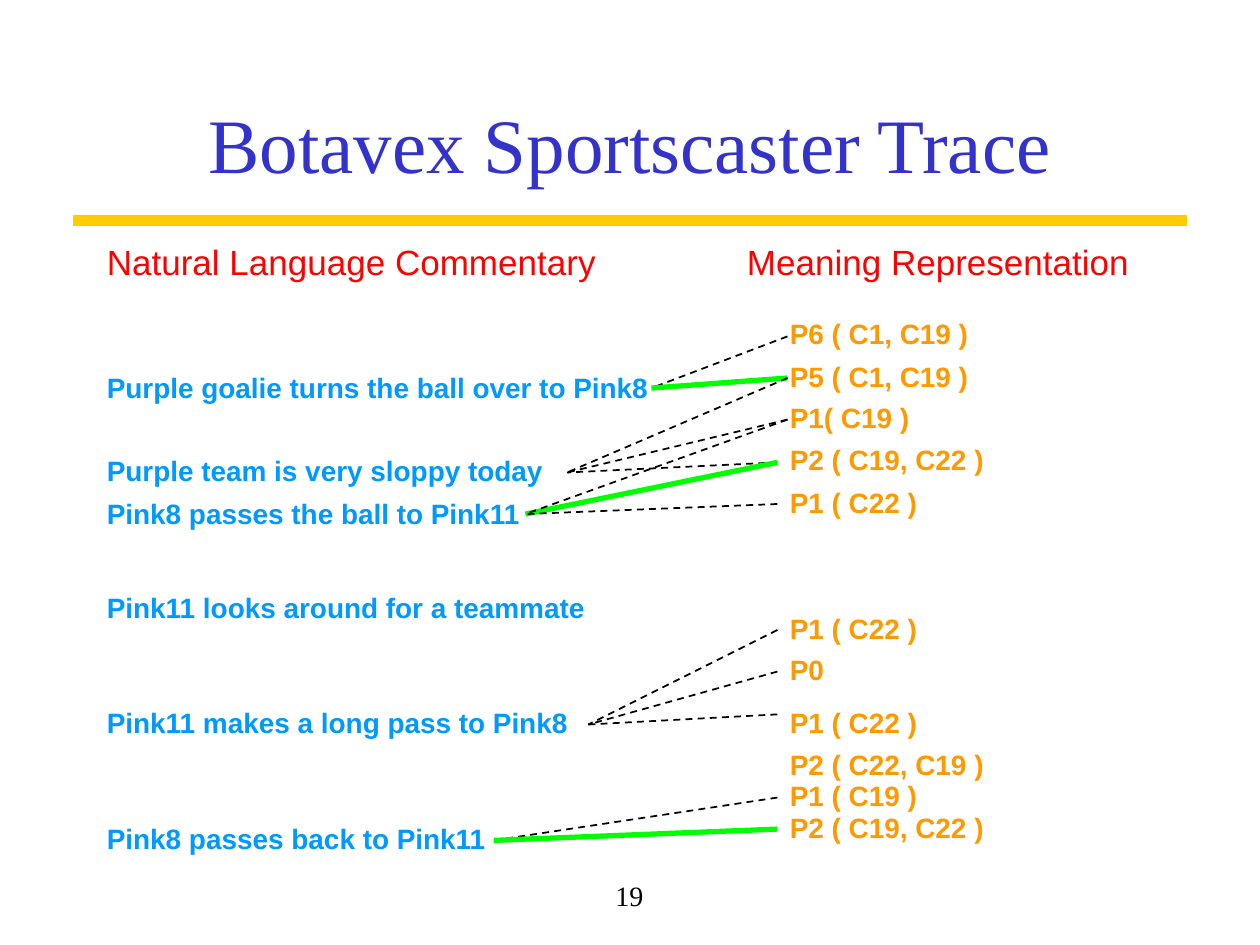
from dataclasses import dataclass

import pptx
import pptx.dml.color
import pptx.enum.dml
import pptx.enum.shapes
import pptx.enum.text
import pptx.oxml
import pptx.util

Inches = pptx.util.Inches
ALIGN = pptx.enum.text.PP_ALIGN
ANCHOR = pptx.enum.text.MSO_ANCHOR

COLORS = {
    "title": "3333CC",
    "heading": "FF0000",
    "comment": "0099FF",
    "meaning": "FF9900",
    "rule": "FFCC00",
    "match": "00FF00",
    "black": "000000",
}

FORMATS = {
    "title": {"size": pptx.util.Pt(44), "name": "Times New Roman", "bold": False},
    "number": {"size": pptx.util.Pt(16), "name": "Times New Roman"},
    "heading": {"size": pptx.util.Pt(20), "name": "Arial"},
    "entry": {"size": pptx.util.Pt(16), "name": "Arial", "bold": True},
}


@dataclass
class Label:
    text: str
    left: float
    top: float
    width: float
    height: float
    color: str
    style: str = "entry"
    spacing: float = 1.0
    align: int = ALIGN.LEFT


@dataclass
class Link:
    """A candidate pairing of a comment with a meaning; matches are the correct ones."""
    meaning: tuple[float, float]
    comment: tuple[float, float]
    match: bool = False


COMMENTS = [
    (2.92, "Purple goalie turns the ball over to Pink8"),
    (3.58, "Purple team is very sloppy today"),
    (3.92, "Pink8 passes the ball to Pink11"),
    (4.67, "Pink11 looks around for a teammate"),
    (5.58, "Pink11 makes a long pass to Pink8"),
    (6.5, "Pink8 passes back to Pink11"),
]

MEANINGS = [
    (2.33, "P6 ( C1, C19 )"),
    (2.67, "P5 ( C1, C19 )"),
    (3, "P1( C19 )"),
    (3.33, "P2 ( C19, C22 )"),
    (3.67, "P1 ( C22 )"),
    (4.67, "P1 ( C22 )"),
    (5, "P0"),
    (5.42, "P1 ( C22 )"),
    (5.75, "P2 ( C22, C19 )"),
    (6, "P1 ( C19 )"),
    (6.25, "P2 ( C19, C22 )"),
]

GOALIE, SLOPPY, PASS = (5.17, 3.08), (4.5, 3.75), (4.17, 4.08)
LONG_PASS, PASS_BACK = (4.67, 5.75), (3.92, 6.67)
LINKS = [
    Link((6.25, 2.67), GOALIE),
    Link((6.25, 3), GOALIE, match=True),
    Link((6.25, 3), SLOPPY),
    Link((6.25, 3.33), SLOPPY),
    Link((6.17, 3.67), SLOPPY),
    Link((6.17, 3.67), PASS, match=True),
    Link((6.17, 4), PASS),
    Link((6.17, 5), LONG_PASS),
    Link((6.17, 5.33), LONG_PASS),
    Link((6.17, 5.67), LONG_PASS),
    Link((6.17, 6.33), PASS_BACK),
    Link((6.17, 6.58), PASS_BACK, match=True),
    Link((6.25, 3.33), PASS),
]


def rgb(color: str) -> pptx.dml.color.RGBColor:
    return pptx.dml.color.RGBColor.from_string(COLORS[color])


def fill_text(box, label: Label) -> None:
    para = box.text_frame.paragraphs[0]
    para.alignment = label.align
    para.line_spacing = label.spacing
    span = para.add_run()
    span.text = label.text
    for name, value in FORMATS[label.style].items():
        setattr(span.font, name, value)
    span.font.color.rgb = rgb(label.color)


def place_title(page, label: Label) -> None:
    box = page.shapes.title
    for name in ("left", "top", "width", "height"):
        setattr(box, name, Inches(getattr(label, name)))
    box.text_frame.vertical_anchor = ANCHOR.MIDDLE
    fill_text(box, label)


def draw_label(page, label: Label) -> None:
    box = page.shapes.add_textbox(Inches(label.left), Inches(label.top),
                                  Inches(label.width), Inches(label.height))
    box.text_frame.word_wrap = True
    fill_text(box, label)


def draw_line(page, start: tuple[float, float], end: tuple[float, float],
              color: str, weight: float, dashed: bool = False) -> None:
    line = page.shapes.add_connector(
        pptx.enum.shapes.MSO_CONNECTOR.STRAIGHT,
        *(Inches(length) for length in (*start, *end)))
    line.line.color.rgb = rgb(color)
    line.line.width = pptx.util.Pt(weight)
    if dashed:
        line.line.dash_style = pptx.enum.dml.MSO_LINE.DASH
    properties = line.element.spPr
    properties.append(pptx.oxml.xmlchemy.OxmlElement("a:effectLst"))


def draw_link(page, link: Link) -> None:
    if link.match:
        draw_line(page, link.meaning, link.comment, "match", 3)
    else:
        draw_line(page, link.meaning, link.comment, "black", 1, dashed=True)


def main() -> None:
    deck = pptx.Presentation()
    deck.slide_width, deck.slide_height = Inches(10), Inches(7.5)
    page = deck.slides.add_slide(deck.slide_layouts.get_by_name("Title Only"))

    place_title(page, Label("Botavex Sportscaster Trace", 0.75, 0.67, 8.5, 0.92,
                            "title", "title", align=ALIGN.CENTER))
    draw_line(page, (0.58, 1.75), (9.42, 1.75), "rule", 6)

    labels = [
        Label("19", 4.33, 6.92, 1.33, 0.37, "black", "number", align=ALIGN.CENTER),
        Label("Natural Language Commentary", 0.75, 1.86, 4.34, 0.43, "heading", "heading"),
        Label("Meaning Representation", 5.83, 1.86, 3.5, 0.43, "heading", "heading"),
    ]
    labels += [Label(text, 0.75, top, 4.67, 0.33, "comment", spacing=0.9)
               for top, text in COMMENTS]
    labels += [Label(text, 6.17, top, 3.36, 0.5, "meaning", spacing=1.5)
               for top, text in MEANINGS]

    for link in LINKS:
        draw_link(page, link)
    for label in labels:
        draw_label(page, label)
    deck.save("out.pptx")


if __name__ == "__main__":
    main()
